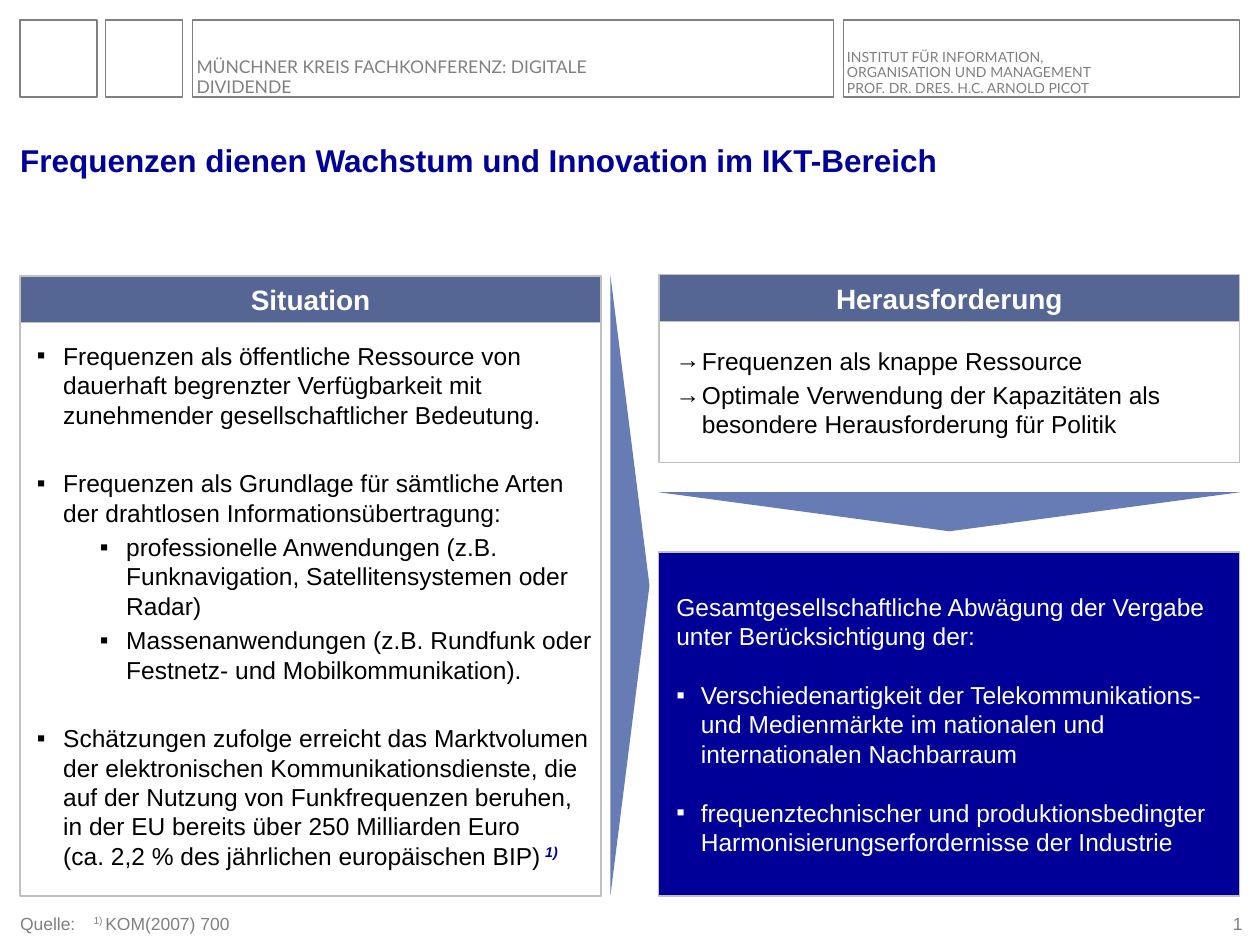
from lxml import etree
from pptx import Presentation
from pptx.dml.color import RGBColor
from pptx.enum.shapes import MSO_SHAPE
from pptx.enum.text import MSO_ANCHOR, MSO_AUTO_SIZE, PP_ALIGN
from pptx.oxml.ns import qn
from pptx.util import Pt

RECTANGLE, TRIANGLE = MSO_SHAPE.RECTANGLE, MSO_SHAPE.ISOSCELES_TRIANGLE
MIDDLE, BOTTOM = MSO_ANCHOR.MIDDLE, MSO_ANCHOR.BOTTOM
LEFT, CENTER, RIGHT = PP_ALIGN.LEFT, PP_ALIGN.CENTER, PP_ALIGN.RIGHT
NO_AUTOFIT = MSO_AUTO_SIZE.NONE

COLORS = {
    "navy": "000099", "header": "556594", "arrow": "677BB4", "border": "C0C0C0",
    "gray": "808080", "black": "000000", "white": "FFFFFF",
}
MARGIN = 11.5
COLUMN_WIDTH = 332
RIGHT_COLUMN = 376.5
HEADER_HEIGHT = 26.6
PANEL_BOTTOM = 512
LIST_GAP = 2.8
BLANK_LINE = 16.8

SITUATION = [
    ("Frequenzen als öffentliche Ressource von dauerhaft begrenzter Verfügbarkeit mit "
     "zunehmender gesellschaftlicher Bedeutung.", 0, 2 * LIST_GAP + BLANK_LINE),
    ("Frequenzen als Grundlage für sämtliche Arten der drahtlosen Informationsübertragung:",
     0, LIST_GAP),
    ("professionelle Anwendungen (z.B. Funknavigation, Satellitensystemen oder Radar)",
     1, LIST_GAP),
    ("Massenanwendungen (z.B. Rundfunk oder Festnetz- und Mobilkommunikation).",
     1, 2 * LIST_GAP + BLANK_LINE),
    ("Schätzungen zufolge erreicht das Marktvolumen der elektronischen "
     "Kommunikationsdienste, die auf der Nutzung von Funkfrequenzen beruhen, in der EU "
     "bereits über 250 Milliarden Euro \v(ca. 2,2 % des jährlichen europäischen BIP)",
     0, LIST_GAP),
]
CHALLENGE = [
    ("Frequenzen als knappe Ressource", 0, LIST_GAP),
    ("Optimale Verwendung der Kapazitäten als besondere Herausforderung für Politik",
     0, LIST_GAP),
]
CRITERIA_INTRO = "Gesamtgesellschaftliche Abwägung der Vergabe unter Berücksichtigung der:"
CRITERIA = [
    "Verschiedenartigkeit der Telekommunikations- und Medienmärkte im nationalen und "
    "internationalen Nachbarraum",
    "frequenztechnischer und produktionsbedingter Harmonisierungserfordernisse der Industrie",
]


def rgb(name):
    """Return the named color."""
    return RGBColor.from_string(COLORS[name])


def place(shape, box):
    """Move a shape to a box of left, top, width and height."""
    shape.left, shape.top, shape.width, shape.height = map(Pt, box)


def paint(shape, fill, line):
    """Set fill and outline, where None means neither."""
    if fill:
        shape.fill.solid()
        shape.fill.fore_color.rgb = rgb(fill)
    else:
        shape.fill.background()
    if line:
        shape.line.color.rgb = rgb(line)
        shape.line.width = Pt(0.75)
    else:
        shape.line.fill.background()


def add_shape(slide, kind, box, fill=None, line=None, rotation=0):
    """Add a preset shape without shadow."""
    shape = slide.shapes.add_shape(kind, *map(Pt, box))
    shape.shadow.inherit = False
    shape.rotation = rotation
    paint(shape, fill, line)
    return shape


def prepare_frame(shape, anchor, inset=0):
    """Set the anchor and insets of a text frame and return it."""
    frame = shape.text_frame
    frame.word_wrap = True
    frame.auto_size = NO_AUTOFIT
    frame.vertical_anchor = anchor
    frame.margin_left = frame.margin_right = Pt(inset)
    frame.margin_top = frame.margin_bottom = Pt(inset)
    return frame


def format_paragraph(paragraph, size, color, align=LEFT, bold=False, font="Arial", after=0):
    """Set the spacing, alignment and font of a paragraph."""
    paragraph.alignment = align
    paragraph.space_before = Pt(0)
    paragraph.space_after = Pt(after)
    paragraph.font.name = font
    paragraph.font.size = Pt(size)
    paragraph.font.bold = bold
    paragraph.font.color.rgb = rgb(color)


def set_indent(paragraph, left, hanging, bullet=None, color="black"):
    """Set a hanging indent and an optional bullet."""
    properties = paragraph._p.get_or_add_pPr()
    properties.set("marL", str(Pt(left)))
    properties.set("indent", str(-Pt(hanging)))
    if bullet:
        bullet_color = etree.SubElement(properties, qn("a:buClr"))
        etree.SubElement(bullet_color, qn("a:srgbClr"), val=COLORS[color])
        etree.SubElement(properties, qn("a:buFont"), typeface="Arial")
        etree.SubElement(properties, qn("a:buChar"), char=bullet)
    else:
        etree.SubElement(properties, qn("a:buNone"))


def add_superscript(paragraph, text):
    """Append a raised run and return it."""
    run = paragraph.add_run()
    run.text = text
    run.font._element.set("baseline", "30000")
    return run


def fill_frame(frame, texts):
    """Write one paragraph per text and return the paragraphs."""
    for index, text in enumerate(texts):
        paragraph = frame.add_paragraph() if index else frame.paragraphs[0]
        paragraph.text = text
    return frame.paragraphs


def add_label(slide, box, texts, size, font="Arial", align=LEFT, line_spacing=1.0):
    """Add a gray text box anchored at the bottom and return its paragraphs."""
    frame = prepare_frame(slide.shapes.add_textbox(*map(Pt, box)), BOTTOM)
    paragraphs = fill_frame(frame, texts)
    for paragraph in paragraphs:
        paragraph.line_spacing = line_spacing
        format_paragraph(paragraph, size, "gray", align, font=font)
    return paragraphs


def add_banner(slide, left, top, height):
    """Add the framed strip with conference and institute."""
    frames = [(0, height), (49, height), (98.5, 366.5), (470.5, 226.5)]
    for offset, width in frames:
        add_shape(slide, RECTANGLE, (left + offset, top, width, height), line="gray")
    add_label(slide, (left + 100.8, top, 255.6, height),
              ["MÜNCHNER KREIS FACHKONFERENZ: DIGITALE DIVIDENDE"], 10, "Lato",
              line_spacing=0.95)
    add_label(slide, (left + 472.5, top, 187, height),
              ["INSTITUT FÜR INFORMATION,\vORGANISATION UND MANAGEMENT",
               "PROF. DR. DRES. H.C. ARNOLD PICOT"], 8, "Lato", line_spacing=0.95)


def add_title(slide, box):
    """Fill the title placeholder."""
    title = slide.shapes.title
    place(title, box)
    paragraph, = fill_frame(prepare_frame(title, BOTTOM),
                            ["Frequenzen dienen Wachstum und Innovation im IKT-Bereich"])
    format_paragraph(paragraph, 18, "navy", bold=True)


def add_panel(slide, header, body, box, body_top, heading, items, bullet):
    """Fill a heading placeholder and the list placeholder below it."""
    left, top, width, height = box
    place(header, (left, top, width, HEADER_HEIGHT))
    place(body, (left, body_top, width, top + height - body_top))
    paint(header, "header", "border")
    paint(body, "white", "border")
    slide.shapes._spTree.append(header._element)
    paragraph, = fill_frame(prepare_frame(header, MIDDLE, 3), [heading])
    format_paragraph(paragraph, 16, "white", CENTER, bold=True)
    paragraphs = fill_frame(prepare_frame(body, MIDDLE, 3), [item[0] for item in items])
    for paragraph, (_, level, after) in zip(paragraphs, items):
        paragraph.level = level
        set_indent(paragraph, 21.6 + 36 * level, 15, bullet)
        format_paragraph(paragraph, 14, "black", after=after)
    return paragraphs


def add_criteria(slide, box):
    """Add the navy box with the weighing criteria."""
    shape = add_shape(slide, RECTANGLE, box, "navy", "border")
    paragraphs = fill_frame(prepare_frame(shape, MIDDLE, 3), [CRITERIA_INTRO] + CRITERIA)
    set_indent(paragraphs[0], 7, 0)
    for paragraph in paragraphs[1:]:
        set_indent(paragraph, 21, 14, "▪", "white")
    for paragraph in paragraphs:
        is_last = paragraph is paragraphs[-1]
        format_paragraph(paragraph, 14, "white", after=0 if is_last else BLANK_LINE)


def add_footer(slide, left, top, height):
    """Add the source line and the page number."""
    source, = add_label(slide, (left, top, 632, height), ["Quelle:\t"], 10)
    set_indent_properties = source._p.get_or_add_pPr()
    set_indent_properties.set("marL", str(Pt(42)))
    set_indent_properties.set("indent", str(-Pt(42)))
    add_superscript(source, "1) ")
    source.add_run().text = "KOM(2007) 700"
    add_label(slide, (690, top, 20, height), ["1"], 10, align=RIGHT)


def main():
    """Build the slide and save it."""
    presentation = Presentation()
    presentation.slide_width, presentation.slide_height = Pt(720), Pt(540)
    slide = presentation.slides.add_slide(presentation.slide_layouts[4])
    _, left_header, left_body, right_header, right_body = slide.placeholders
    add_banner(slide, MARGIN, 11.5, 44)
    add_title(slide, (MARGIN, 60.5, 697, 41.8))
    situation = add_panel(slide, left_header, left_body,
                          (MARGIN, 157.7, COLUMN_WIDTH, PANEL_BOTTOM - 157.7), 180,
                          "Situation", SITUATION, "▪")
    footnote = add_superscript(situation[-1], " 1)")
    footnote.font.bold = footnote.font.italic = True
    footnote.font.color.rgb = rgb("navy")
    add_panel(slide, right_header, right_body, (RIGHT_COLUMN, 157, COLUMN_WIDTH, 107.5),
              183.6, "Herausforderung", CHALLENGE, "→")
    add_shape(slide, TRIANGLE, (RIGHT_COLUMN, 281.3, COLUMN_WIDTH, 22.3), "arrow", rotation=180)
    add_shape(slide, TRIANGLE, (183, 323.5, 354, 22.3), "arrow", rotation=90)
    add_criteria(slide, (RIGHT_COLUMN, 315.4, COLUMN_WIDTH, PANEL_BOTTOM - 315.4))
    add_footer(slide, MARGIN, 521.3, 12.2)
    presentation.save("out.pptx")


if __name__ == "__main__":
    main()
